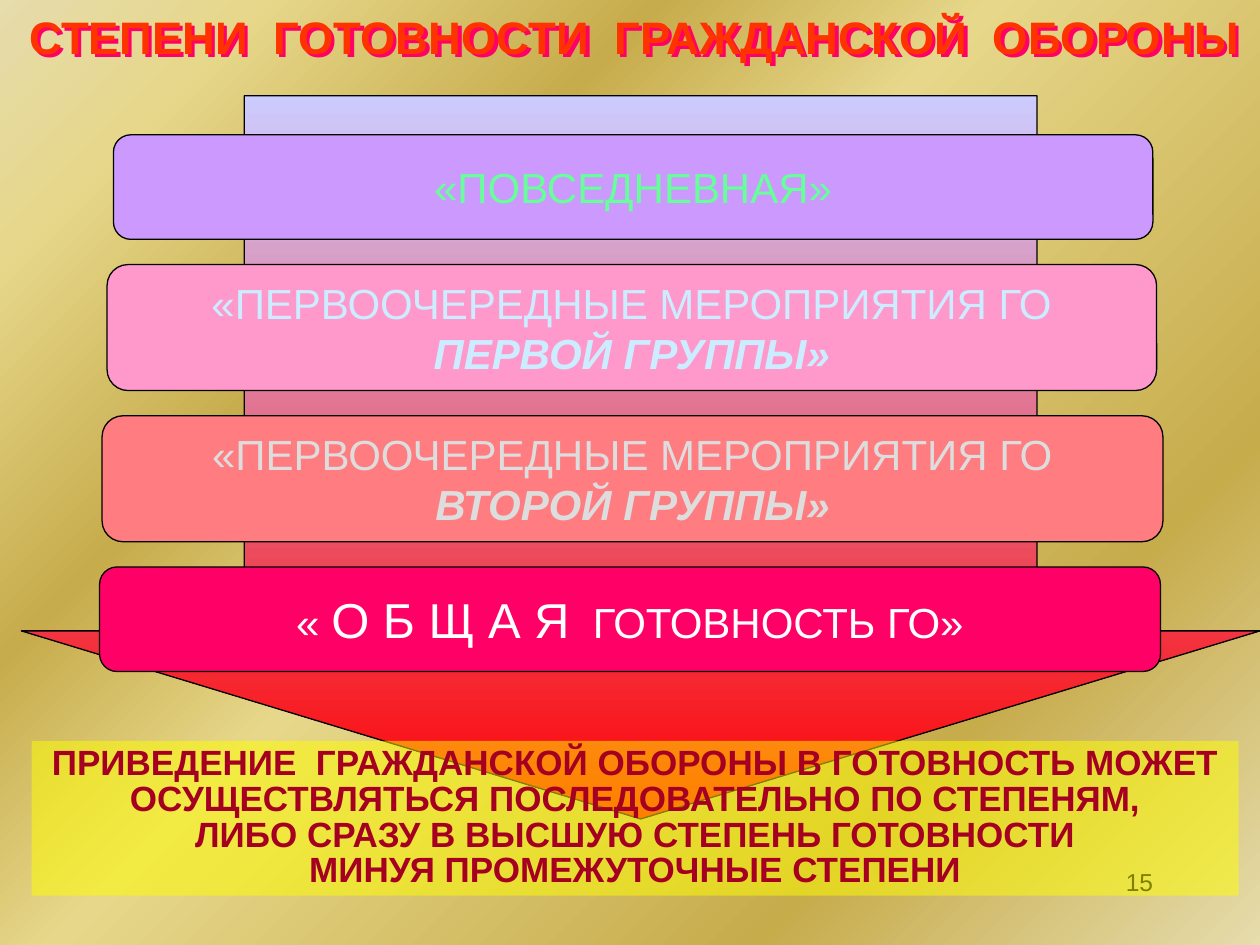
from lxml import etree
from pptx import Presentation
from pptx import util as u
from pptx.dml.color import RGBColor
from pptx.enum import shapes, text
from pptx.oxml.ns import qn

COLORS = {
    "black": "000000", "title": "FF3300", "shadow": "FF0066",
    "note": "FFFF00", "note_text": "A50021",
    "arrow_top": "CCCCFF", "arrow_tip": "FF0000",
    "pale": "E6DCAC", "light": "E6D78A", "gold": "C7AC4C",
    "violet": "CC99FF", "pink": "FF99CC", "coral": "FF7C80", "crimson": "FF0066",
    "green": "66FF99", "ice": "CCECFF", "grey": "DDDDDD", "white": "FFFFFF",
}


def add_color(parent, name):
    return etree.SubElement(parent, qn("a:srgbClr"), val=COLORS[name])


class SlideBuilder:
    font = "Arial"

    def __init__(self, s):
        self.s = s

    def gradient(self, fill_parent, stops, angle):
        """Replace the solid fill of an element with a linear gradient."""
        grad = etree.Element(qn("a:gradFill"), rotWithShape="1")
        stop_list = etree.SubElement(grad, qn("a:gsLst"))
        for pos, name in stops:
            add_color(etree.SubElement(stop_list, qn("a:gs"), pos=str(pos * 1000)), name)
        etree.SubElement(grad, qn("a:lin"), ang=str(angle * 60000), scaled="0")
        fill_parent.replace(fill_parent.find(qn("a:solidFill")), grad)

    def background(self, stops, angle):
        self.s.background.fill.solid()
        self.gradient(self.s.element.find(".//" + qn("p:bgPr")), stops, angle)

    def set_text(self, sp, paragraphs, color, size, align=text.PP_ALIGN.CENTER,
                 anchor=text.MSO_ANCHOR.MIDDLE, wrap=True, spacing=None):
        """Each paragraph is a list of (text, font overrides) runs."""
        tf = sp.text_frame
        tf.word_wrap = wrap
        tf.vertical_anchor = anchor
        for i, runs in enumerate(paragraphs):
            p = tf.add_paragraph() if i else tf.paragraphs[0]
            p.alignment = align
            p.line_spacing = spacing
            for words, style in runs:
                r = p.add_run()
                r.text = words
                r.font.name = self.font
                r.font.size = u.Pt(style.get("size", size))
                r.font.bold = style.get("bold", False)
                r.font.italic = style.get("italic", False)
                r.font.color.rgb = RGBColor.from_string(COLORS[color])

    def shape(self, kind, box, fill, outline=True):
        sp = self.s.shapes.add_shape(kind, *map(u.Inches, box))
        sp.shadow.inherit = False
        sp.fill.solid()
        sp.fill.fore_color.rgb = RGBColor.from_string(COLORS[fill])
        if outline:
            sp.line.color.rgb = RGBColor.from_string(COLORS["black"])
            sp.line.width = u.Pt(0.75)
        else:
            sp.line.fill.background()
        return sp

    def title(self, words, box):
        sp = self.s.shapes.title
        sp.left, sp.top, sp.width, sp.height = map(u.Inches, box)
        self.set_text(sp, [[(words, {"bold": True})]], "title", 26, spacing=0.9)
        sp.text_frame.auto_size = text.MSO_AUTO_SIZE.NONE
        effects = etree.SubElement(sp.element.spPr, qn("a:effectLst"))
        shadow = etree.SubElement(effects, qn("a:outerShdw"), dist="35921",
                                  dir="2700000", algn="ctr", rotWithShape="0")
        add_color(shadow, "shadow")

    def label(self, words, box, color, size):
        sp = self.s.shapes.add_textbox(*map(u.Inches, box))
        self.set_text(sp, [[(words, {})]], color, size, text.PP_ALIGN.RIGHT,
                      text.MSO_ANCHOR.TOP)

    def arrow(self, box, adjustments, stops):
        sp = self.shape(shapes.MSO_SHAPE.DOWN_ARROW, box, stops[0][1])
        for i, value in enumerate(adjustments):
            sp.adjustments[i] = value
        self.gradient(sp.element.spPr, stops, 90)

    def step(self, box, fill, color, paragraphs):
        sp = self.shape(shapes.MSO_SHAPE.FLOWCHART_ALTERNATE_PROCESS, box, fill)
        self.set_text(sp, paragraphs, color, 24, wrap=False)

    def note(self, lines, box):
        sp = self.shape(shapes.MSO_SHAPE.RECTANGLE, box, "note", outline=False)
        fill_color = sp.element.spPr.find(qn("a:solidFill"))[0]
        etree.SubElement(fill_color, qn("a:alpha"), val="50000")
        self.set_text(sp, [[(line, {"bold": True})] for line in lines], "note_text", 20,
                      anchor=text.MSO_ANCHOR.TOP, spacing=0.85)


def main():
    prs = Presentation()
    prs.slide_width, prs.slide_height = u.Inches(10), u.Inches(7.5)
    b = SlideBuilder(prs.slides.add_slide(prs.slide_layouts[5]))

    # Background, title and page number
    b.background([(0, "pale"), (12, "light"), (30, "gold"), (45, "light"),
                  (77, "gold"), (100, "pale")], 45)
    b.title("СТЕПЕНИ  ГОТОВНОСТИ  ГРАЖДАНСКОЙ  ОБОРОНЫ", (0.08, 0, 9.92, 0.63))
    b.label("15", (7.17, 6.83, 2.08, 0.5), "black", 14)

    # Arrow behind the steps
    b.arrow((0.17, 0.76, 9.83, 5.74), (0.64, 0.26),
            [(0, "arrow_top"), (100, "arrow_tip")])

    # Degrees of readiness, stacked with equal gaps
    strong = {"bold": True, "italic": True}
    measures = [("«ПЕРВООЧЕРЕДНЫЕ МЕРОПРИЯТИЯ ГО", {})]
    steps = [
        (0.9, 8.25, 0.83, "violet", "green", [[("«ПОВСЕДНЕВНАЯ»", {})]]),
        (0.85, 8.33, 1, "pink", "ice", [measures, [("ПЕРВОЙ ГРУППЫ»", strong)]]),
        (0.81, 8.42, 1, "coral", "grey", [measures, [("ВТОРОЙ ГРУППЫ»", strong)]]),
        (0.79, 8.42, 0.83, "crimson", "white",
         [[("« ", {}), ("О Б Щ А Я", {"size": 28}), ("  ГОТОВНОСТЬ ГО»", {})]]),
    ]
    top, gap = 1.07, 0.2
    for left, width, height, fill, color, paragraphs in steps:
        b.step((left, top, width, height), fill, color, paragraphs)
        top += height + gap

    # Closing note
    b.note(["ПРИВЕДЕНИЕ  ГРАЖДАНСКОЙ ОБОРОНЫ В ГОТОВНОСТЬ МОЖЕТ "
            "ОСУЩЕСТВЛЯТЬСЯ ПОСЛЕДОВАТЕЛЬНО ПО СТЕПЕНЯМ,",
            "ЛИБО СРАЗУ В ВЫСШУЮ СТЕПЕНЬ ГОТОВНОСТИ",
            "МИНУЯ ПРОМЕЖУТОЧНЫЕ СТЕПЕНИ"], (0.25, 5.88, 9.58, 1.23))

    prs.save("out.pptx")


if __name__ == "__main__":
    main()
